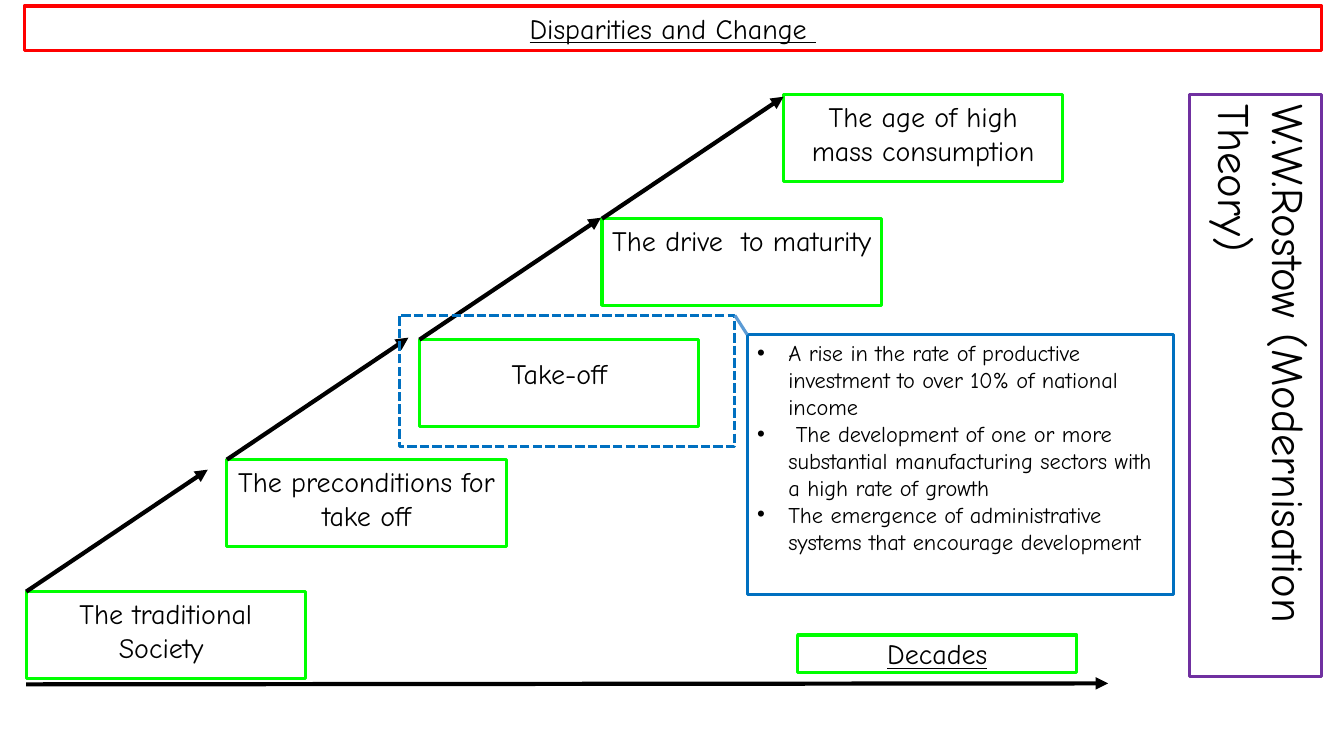
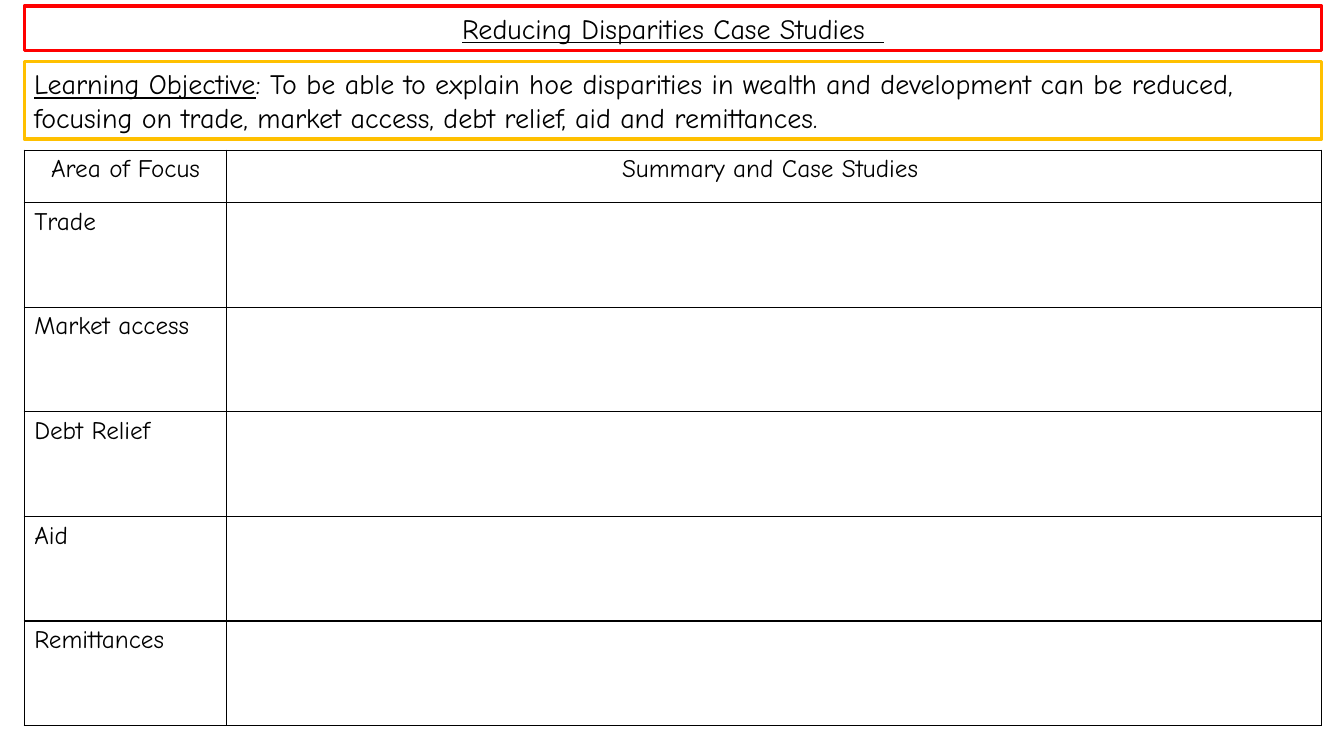
import dataclasses

import lxml.etree
import pptx
import pptx.dml.color
import pptx.enum.dml
import pptx.enum.shapes
import pptx.enum.text
import pptx.oxml.ns
import pptx.util

RGB = pptx.dml.color.RGBColor
BLACK = RGB(0, 0, 0)
RED = RGB(0xFF, 0, 0)
GREEN = RGB(0, 0xFF, 0)
BLUE = RGB(0, 0x70, 0xC0)
PALE_BLUE = RGB(0x5B, 0x9B, 0xD5)
PURPLE = RGB(0x70, 0x30, 0xA0)
AMBER = RGB(0xFF, 0xC0, 0)
FONT = "Comic Neue"
BORDER = 2.25
CENTER = pptx.enum.text.PP_ALIGN.CENTER
LEFT = pptx.enum.text.PP_ALIGN.LEFT
TOP = pptx.enum.text.MSO_ANCHOR.TOP
MIDDLE = pptx.enum.text.MSO_ANCHOR.MIDDLE
qn = pptx.oxml.ns.qn

STAGES = [
    ("The traditional Society ", 0, 84.27),
    ("The preconditions for take off", 18.55, 61.88),
    ("Take-off", 36.35, 41.54),
    ("The drive  to maturity ", 53.22, 21.03),
    ("The age of high mass consumption", 70, 0),
]
TAKE_OFF_POINTS = [
    "A rise in the rate of productive investment to over 10% of national income",
    " The development of one or more substantial manufacturing sectors with a high rate of growth",
    "The emergence of administrative systems that encourage development",
]
FOCUS_AREAS = ["Trade", "Market access", "Debt Relief", "Aid", "Remittances"]


@dataclasses.dataclass
class Box:
    left: float
    top: float
    width: float
    height: float

    def point(self, x, y):
        return (int(self.left + self.width * x / 100),
                int(self.top + self.height * y / 100))

    def inner(self, x, y, width, height):
        return Box(*self.point(x, y), int(self.width * width / 100),
                   int(self.height * height / 100))

    def place(self):
        return self.left, self.top, self.width, self.height


def format_text(tf, size, align=LEFT, underline=False):
    for p in tf.paragraphs:
        p.alignment = align
        for r in p.runs:
            r.font.name = FONT
            r.font.size = pptx.util.Pt(size)
            r.font.color.rgb = BLACK
            r.font.underline = underline


def outline(sp, color, width=BORDER):
    sp.line.color.rgb = color
    sp.line.width = pptx.util.Pt(width)


def add_frame(s, box, color, text="", size=20, align=CENTER, anchor=TOP, underline=False):
    sp = s.shapes.add_shape(pptx.enum.shapes.MSO_SHAPE.RECTANGLE, *box.place())
    sp.shadow.inherit = False
    sp.fill.background()
    outline(sp, color)
    tf = sp.text_frame
    tf.word_wrap = True
    tf.vertical_anchor = anchor
    tf.text = text
    format_text(tf, size, align, underline)
    return sp


def add_line(s, start, end, color=BLACK, width=3, arrow=True):
    cx = s.shapes.add_connector(pptx.enum.shapes.MSO_CONNECTOR.STRAIGHT, *start, *end)
    outline(cx, color, width)
    spPr = cx._element.spPr
    if arrow:
        lxml.etree.SubElement(spPr.find(qn("a:ln")), qn("a:tailEnd"), type="triangle")
    lxml.etree.SubElement(spPr, qn("a:effectLst"))


def add_title(s, box, text):
    sp = s.shapes.title
    sp.left, sp.top, sp.width, sp.height = box.place()
    outline(sp, RED)
    tf = sp.text_frame
    tf.text = text
    tf.word_wrap = True
    tf.auto_size = pptx.enum.text.MSO_AUTO_SIZE.NONE
    tf.vertical_anchor = TOP
    format_text(tf, 20, CENTER, True)


def add_staircase(s, box):
    for text, x, y in STAGES:
        sp = add_frame(s, box.inner(x, y, 25.82, 14.7), GREEN, text)
        if text == "Take-off":
            sp.text_frame.margin_top = pptx.util.Inches(0.17)
    for text, x, y in STAGES[:-1]:
        add_line(s, box.point(x, y), box.point(x + 16.78, y - 20.68))
    add_line(s, box.point(0, 100), box.point(100, 99.83))
    add_frame(s, box.inner(71.3, 91.62, 25.82, 6.32), GREEN, "Decades",
              anchor=MIDDLE, underline=True)


def add_take_off_note(s, box):
    highlight = box.inner(34.48, 37.44, 31.03, 22.22)
    note = box.inner(66.64, 40.68, 39.42, 44.1)
    sp = add_frame(s, highlight, BLUE)
    sp.line.dash_style = pptx.enum.dml.MSO_LINE.SQUARE_DOT
    sp = add_frame(s, note, BLUE, "\n".join(TAKE_OFF_POINTS), 16, LEFT)
    indent = pptx.util.Inches(0.31)
    for p in sp.text_frame.paragraphs:
        pPr = p._p.get_or_add_pPr()
        pPr.set("marL", str(int(indent)))
        pPr.set("indent", str(-int(indent)))
        lxml.etree.SubElement(pPr, qn("a:buFont"), typeface="Arial")
        lxml.etree.SubElement(pPr, qn("a:buChar"), char="•")
    add_line(s, highlight.point(100, 0), note.point(0, 0), PALE_BLUE, BORDER, False)


def add_sidebar(s, box, text):
    shift = (box.height - box.width) // 2
    lying = Box(box.left - shift, box.top + shift, box.height, box.width)
    sp = add_frame(s, lying, PURPLE, text, 32, LEFT)
    sp.rotation = 90


def add_objective(s, box, label, text):
    sp = add_frame(s, box, AMBER, label, align=LEFT)
    p = sp.text_frame.paragraphs[0]
    p.add_run().text = text
    format_text(sp.text_frame, 20)
    p.runs[0].font.underline = True


def format_cell(cell, align):
    cell.fill.background()
    format_text(cell.text_frame, 18, align)
    tcPr = cell._tc.get_or_add_tcPr()
    for i, side in enumerate(("lnL", "lnR", "lnT", "lnB")):
        ln = lxml.etree.Element(qn("a:" + side), w=str(int(pptx.util.Pt(1))))
        fill = lxml.etree.SubElement(ln, qn("a:solidFill"))
        lxml.etree.SubElement(fill, qn("a:srgbClr"), val=str(BLACK))
        tcPr.insert(i, ln)


def add_focus_table(s, box):
    rows = [("Area of Focus", "Summary and Case Studies ")]
    rows += [(area, "") for area in FOCUS_AREAS]
    table = s.shapes.add_table(len(rows), 2, *box.place()).table
    table.first_row = False
    table.horz_banding = False
    for col, share in zip(table.columns, (15.62, 84.38)):
        col.width = int(box.width * share / 100)
    half_row = box.height // (2 * len(FOCUS_AREAS) + 1)
    for i, texts in enumerate(rows):
        table.rows[i].height = half_row * (2 if i else 1)
        for j, text in enumerate(texts):
            cell = table.cell(i, j)
            cell.text = text
            format_cell(cell, LEFT if i else CENTER)


def add_slide(prs, page, title):
    s = prs.slides.add_slide(prs.slide_layouts[5])
    add_title(s, page.inner(1.8, 0.8, 96.55, 5.87), title)
    return s


def build_rostow_slide(prs, page):
    s = add_slide(prs, page, "Disparities and Change ")
    diagram = page.inner(1.95, 12.53, 80.5, 78)
    add_staircase(s, diagram)
    add_sidebar(s, page.inner(88.52, 12.53, 9.83, 76.93), "W.W.Rostow (Modernisation Theory)")
    add_take_off_note(s, diagram)


def build_case_study_slide(prs, page):
    s = add_slide(prs, page, "Reducing Disparities Case Studies  ")
    add_objective(
        s, page.inner(1.8, 8.13, 96.55, 10.27), "Learning Objective",
        ": To be able to explain hoe disparities in wealth and development can be reduced, "
        "focusing on trade, market access, debt relief, aid and remittances.")
    add_focus_table(s, page.inner(1.8, 19.87, 96.55, 76.13))


def main():
    prs = pptx.Presentation()
    prs.slide_width = pptx.util.Inches(13.33)
    prs.slide_height = pptx.util.Inches(7.5)
    page = Box(0, 0, prs.slide_width, prs.slide_height)
    build_rostow_slide(prs, page)
    build_case_study_slide(prs, page)
    prs.save("out.pptx")


if __name__ == "__main__":
    main()
